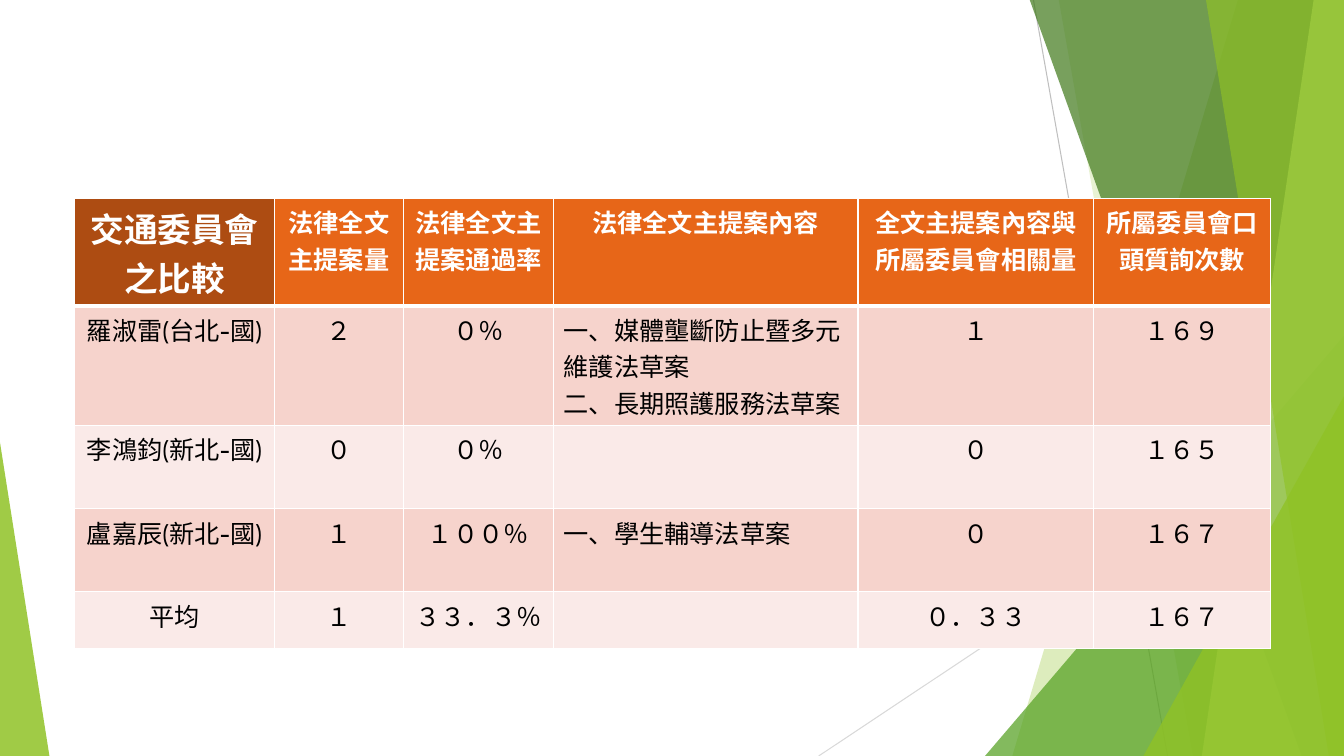
from dataclasses import dataclass

from lxml.etree import SubElement as Sub
from pptx import Presentation
from pptx.dml.color import RGBColor
from pptx.enum.shapes import MSO_CONNECTOR as Link, MSO_SHAPE as Shape
from pptx.enum.text import PP_ALIGN as Align
from pptx.oxml.ns import qn
from pptx.util import Inches, Pt

WHITE = RGBColor(0xFF, 0xFF, 0xFF)
BLACK = RGBColor(0x00, 0x00, 0x00)
GRAY = RGBColor(0xBF, 0xBF, 0xBF)
SILVER = RGBColor(0xD9, 0xD9, 0xD9)
GREEN = RGBColor(0x90, 0xC2, 0x26)
LEAF = RGBColor(0x54, 0xA0, 0x21)
FOREST = RGBColor(0x3F, 0x78, 0x19)
LIME = RGBColor(0xC0, 0xE4, 0x74)
BROWN = RGBColor(0xAD, 0x4C, 0x12)
ORANGE = RGBColor(0xE7, 0x66, 0x18)
ROSE = RGBColor(0xF6, 0xD3, 0xCC)
BLUSH = RGBColor(0xFA, 0xEA, 0xE8)

WIDE, HIGH, TOP = 13.33, 7.5, -0.01
LIST_COL = 3


@dataclass
class Ray:
    start: tuple[float, float]
    end: tuple[float, float]
    color: RGBColor


@dataclass
class Band:
    top: float
    foot: float
    color: RGBColor
    alpha: int


@dataclass
class Wedge:
    left: float
    top: float
    width: float
    apex: float
    color: RGBColor
    alpha: int


RAYS = [
    Ray((10.25, 0), (11.58, HIGH), GRAY),
    Ray((WIDE, 4.03), (8.12, HIGH), SILVER),
]
FACETS = [
    Band(12.28, 10.04, GREEN, 30),
    Band(10.5, 11.83, GREEN, 20),
    Wedge(9.77, 3.33, 3.56, 1, LEAF, 72),
    Band(10.21, 12.91, FOREST, 70),
    Band(13.03, 11.92, LIME, 70),
    Band(11.96, 13.18, GREEN, 65),
    Wedge(11.34, 3.93, 1.99, 1, GREEN, 80),
    Wedge(0, 4.39, 0.49, 0, GREEN, 85),
]
COLS = [1.98, 1.28, 1.49, 3.02, 2.34, 1.75]
ROWS = [0.32, 0.32, 0.56, 0.56, 0.56]
CELLS = [
    ["交通委員會之比較", "法律全文主提案量", "法律全文主提案通過率",
     "法律全文主提案內容", "全文主提案內容與所屬委員會相關量",
     "所屬委員會口頭質詢次數"],
    ["羅淑雷(台北-國)", "２", "０％",
     "一、媒體壟斷防止暨多元維護法草案\n二、長期照護服務法草案",
     "１", "１６９"],
    ["李鴻鈞(新北-國)", "０", "０％", "", "０", "１６５"],
    ["盧嘉辰(新北-國)", "１", "１００％", "一、學生輔導法草案", "０", "１６７"],
    ["平均", "１", "３３．３％", "", "０．３３", "１６７"],
]


def draw_ray(slide, ray: Ray) -> None:
    ends = [Inches(v) for v in (*ray.start, *ray.end)]
    line = slide.shapes.add_connector(Link.STRAIGHT, *ends)
    line.line.color.rgb = ray.color
    line.line.width = Pt(0.75)
    Sub(line._element.spPr, qn("a:effectLst"))


def paint(shape, color: RGBColor, alpha: int) -> None:
    shape.shadow.inherit = False
    shape.line.fill.background()
    shape.fill.solid()
    shape.fill.fore_color.rgb = color
    tone = shape._element.spPr.find(qn("a:solidFill"))[0]
    Sub(tone, qn("a:alpha"), val=str(alpha * 1000))


def draw_band(slide, band: Band) -> None:
    path = [(band.top, TOP), (WIDE, TOP), (WIDE, HIGH), (band.foot, HIGH)]
    spots = [(Inches(x), Inches(y)) for x, y in path]
    form = slide.shapes.build_freeform(*spots[0])
    form.add_line_segments(spots[1:], close=True)
    paint(form.convert_to_shape(), band.color, band.alpha)


def draw_wedge(slide, wedge: Wedge) -> None:
    shape = slide.shapes.add_shape(
        Shape.ISOSCELES_TRIANGLE, Inches(wedge.left), Inches(wedge.top),
        Inches(wedge.width), Inches(HIGH - wedge.top))
    shape.adjustments[0] = wedge.apex
    paint(shape, wedge.color, wedge.alpha)


def write(cell, text: str, *, size: int = 18, color: RGBColor = BLACK,
          bold: bool = False, align: Align = Align.CENTER) -> None:
    cell.text = text
    for para in cell.text_frame.paragraphs:
        para.alignment = align
        para.font.size = Pt(size)
        for run in para.runs:
            font = run.font
            font.name, font.size, font.bold = "Cabin", Pt(size), bold
            font.color.rgb = color


def trim(cell, head: bool, under: bool) -> None:
    props = cell._tc.get_or_add_tcPr()
    sides = {"L": 1, "R": 1, "T": 3 if under else 1, "B": 3 if head else 1}
    for side, width in sides.items():
        edge = Sub(props, qn(f"a:ln{side}"), w=str(Pt(width)))
        fill = Sub(edge, qn("a:solidFill"))
        Sub(fill, qn("a:srgbClr"), val=str(WHITE))


def shade(row: int, col: int) -> RGBColor:
    if row == 0:
        return ORANGE if col else BROWN
    return ROSE if row % 2 else BLUSH


def draw_table(slide) -> None:
    table = slide.shapes.add_table(
        len(ROWS), len(COLS), Inches(0.74), Inches(1.97),
        Inches(sum(COLS)), Inches(sum(ROWS))).table
    for col, width in zip(table.columns, COLS):
        col.width = Inches(width)
    for row, height in zip(table.rows, ROWS):
        row.height = Inches(height)
    for r, texts in enumerate(CELLS):
        head = r == 0
        for c, text in enumerate(texts):
            cell = table.cell(r, c)
            trim(cell, head, r == 1)
            cell.fill.solid()
            cell.fill.fore_color.rgb = shade(r, c)
            left = c == LIST_COL and not head
            write(cell, text, size=24 if head and c == 0 else 18,
                  color=WHITE if head else BLACK, bold=head,
                  align=Align.LEFT if left else Align.CENTER)


def main() -> None:
    deck = Presentation()
    deck.slide_width, deck.slide_height = Inches(WIDE), Inches(HIGH)
    slide = deck.slides.add_slide(deck.slide_layouts[6])
    for ray in RAYS:
        draw_ray(slide, ray)
    for facet in FACETS:
        if isinstance(facet, Band):
            draw_band(slide, facet)
        else:
            draw_wedge(slide, facet)
    draw_table(slide)
    deck.save("out.pptx")


if __name__ == "__main__":
    main()
